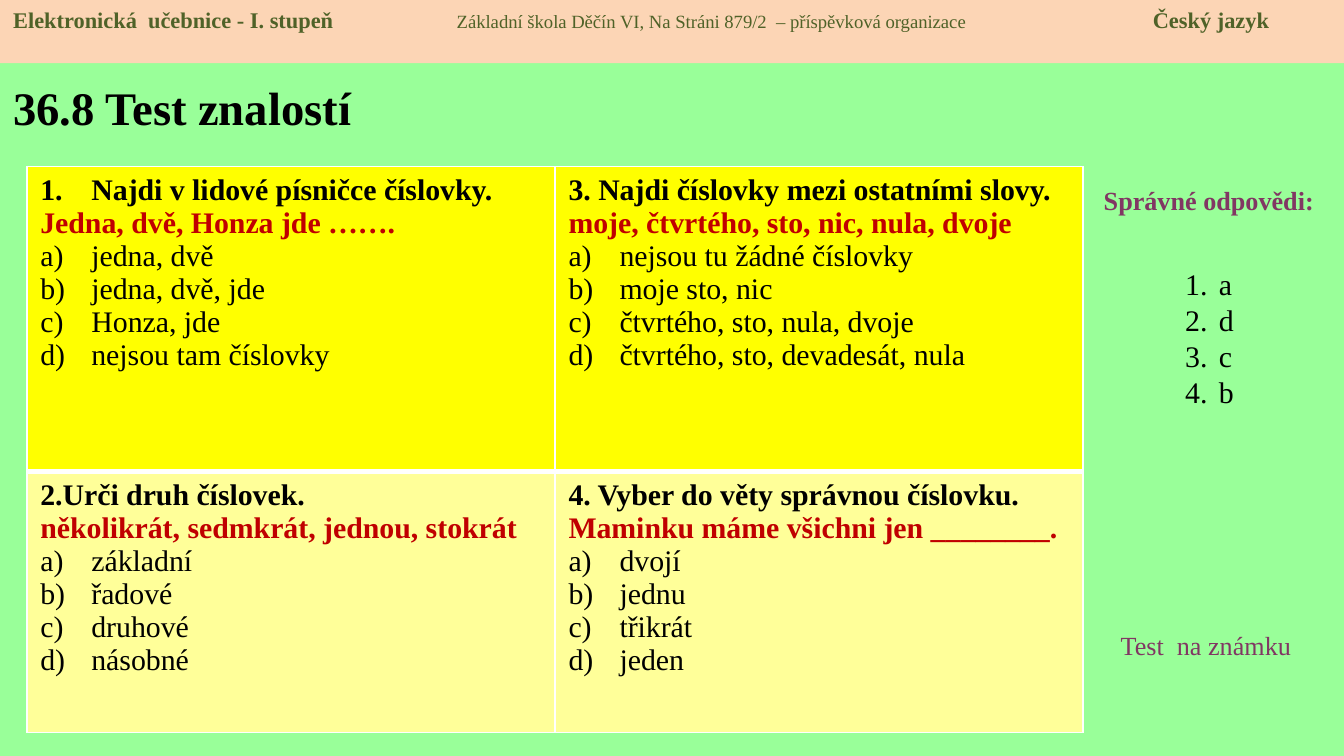
from pptx import Presentation
from pptx.dml.color import RGBColor
from pptx.enum.shapes import MSO_SHAPE
from pptx.enum.text import MSO_ANCHOR, PP_ALIGN
from pptx.util import Inches, Pt
from lxml.etree import SubElement
from pptx.oxml.ns import qn

COLORS = {
    "page": "99FF99", "band": "FCD5B5", "olive": "4F6228", "plum": "813763",
    "black": "000000", "red": "C00000", "white": "FFFFFF",
    "yellow": "FFFF00", "pale": "FFFF99",
}


def style(para, size, color, bold=False):
    for span in para.runs:
        span.font.name = "Times New Roman"
        span.font.size = Pt(size)
        span.font.bold = bold
        span.font.color.rgb = RGBColor.from_string(COLORS[color])


def number(para, scheme, indent):
    """Give the paragraph automatic numbering with a hanging indent."""
    properties = para._p.get_or_add_pPr()
    properties.set("marL", str(Inches(indent)))
    properties.set("indent", str(-Inches(indent)))
    SubElement(properties, qn("a:buFont"), typeface="+mj-lt")
    SubElement(properties, qn("a:buAutoNum"), type=scheme)


deck = Presentation()
deck.slide_width = Inches(10)
deck.slide_height = Inches(10) * 9 // 16
page = deck.slides.add_slide(deck.slide_layouts[6])
page.background.fill.solid()
page.background.fill.fore_color.rgb = RGBColor.from_string(COLORS["page"])

# Title and side labels
labels = [
    ("36.8 Test znalostí", 0, 0.47, 3.19, 0.65, 25, "black", True, PP_ALIGN.LEFT),
    ("Správné odpovědi:", 8.05, 1.32, 1.89, 0.34, 14, "plum", True, PP_ALIGN.CENTER),
    ("Test  na známku", 8.24, 4.63, 1.57, 0.34, 14, "plum", False, PP_ALIGN.LEFT),
]
for text, left, top, width, height, size, color, bold, align in labels:
    box = page.shapes.add_textbox(Inches(left), Inches(top), Inches(width), Inches(height))
    box.text_frame.word_wrap = True
    box.text_frame.vertical_anchor = MSO_ANCHOR.MIDDLE
    para = box.text_frame.paragraphs[0]
    para.text = text
    para.alignment = align
    style(para, size, color, bold)

# Questions
questions = [
    [("Najdi v lidové písničce číslovky.", "Jedna, dvě, Honza jde …….",
      "jedna, dvě", "jedna, dvě, jde", "Honza, jde", "nejsou tam číslovky"),
     ("3. Najdi číslovky mezi ostatními slovy.", "moje, čtvrtého, sto, nic, nula, dvoje",
      "nejsou tu žádné číslovky", "moje sto, nic", "čtvrtého, sto, nula, dvoje",
      "čtvrtého, sto, devadesát, nula")],
    [("2.Urči druh číslovek.", "několikrát, sedmkrát, jednou, stokrát",
      "základní", "řadové", "druhové", "násobné"),
     ("4. Vyber do věty správnou číslovku.", "Maminku máme všichni jen ________.",
      "dvojí", "jednu", "třikrát", "jeden")],
]
table = page.shapes.add_table(2, 2, Inches(0.2), Inches(1.24), Inches(7.86), Inches(4.21)).table
row_styles = [(2.27, "yellow", {"lnB": 3}), (1.94, "pale", {"lnT": 3})]
for row, (height, fill, thick) in enumerate(row_styles):
    table.rows[row].height = Inches(height)
    for column, lines in enumerate(questions[row]):
        cell = table.cell(row, column)
        cell.text_frame.text = "\n".join(lines)
        for index, para in enumerate(cell.text_frame.paragraphs):
            style(para, 16, "red" if index == 1 else "black", index < 2)
            if index > 1:
                number(para, "alphaLcParenR", 0.38)
        if row == column == 0:
            number(cell.text_frame.paragraphs[0], "arabicPeriod", 0.38)
        properties = cell._tc.get_or_add_tcPr()
        for side in ("lnL", "lnR", "lnT", "lnB"):
            line = SubElement(properties, qn(f"a:{side}"), w=str(Pt(thick.get(side, 1))))
            SubElement(SubElement(line, qn("a:solidFill")), qn("a:srgbClr"), val=COLORS["white"])
        cell.fill.solid()
        cell.fill.fore_color.rgb = RGBColor.from_string(COLORS[fill])

# Answer key
answers = page.shapes.add_textbox(Inches(8.72), Inches(1.65), Inches(0.55), Inches(1.99))
answers.text_frame.word_wrap = True
answers.text_frame.margin_top = Inches(0.33)
answers.text_frame.text = "a\nd\nc\nb"
for para in answers.text_frame.paragraphs:
    style(para, 16, "black")
    number(para, "arabicPeriod", 0.25)

# Header band, with its three parts set on tab stops
band = page.shapes.add_shape(MSO_SHAPE.RECTANGLE, 0, 0, Inches(10), Inches(0.47))
band.shadow.inherit = False
band.fill.solid()
band.fill.fore_color.rgb = RGBColor.from_string(COLORS["band"])
band.line.fill.background()
band.text_frame.word_wrap = True
band.text_frame.vertical_anchor = MSO_ANCHOR.TOP
para = band.text_frame.paragraphs[0]
para.alignment = PP_ALIGN.LEFT
for text in ("Elektronická  učebnice - I. stupeň",
             "\tZákladní škola Děčín VI, Na Stráni 879/2  – příspěvková organizace",
             "\tČeský jazyk"):
    para.add_run().text = text
style(para, 12, "olive", True)
para.runs[1].font.size = Pt(10)
para.runs[1].font.bold = False
tabs = SubElement(para._p.get_or_add_pPr(), qn("a:tabLst"))
for stop in (3.3, 8.48):
    SubElement(tabs, qn("a:tab"), pos=str(Inches(stop)), algn="l")

deck.save("out.pptx")
